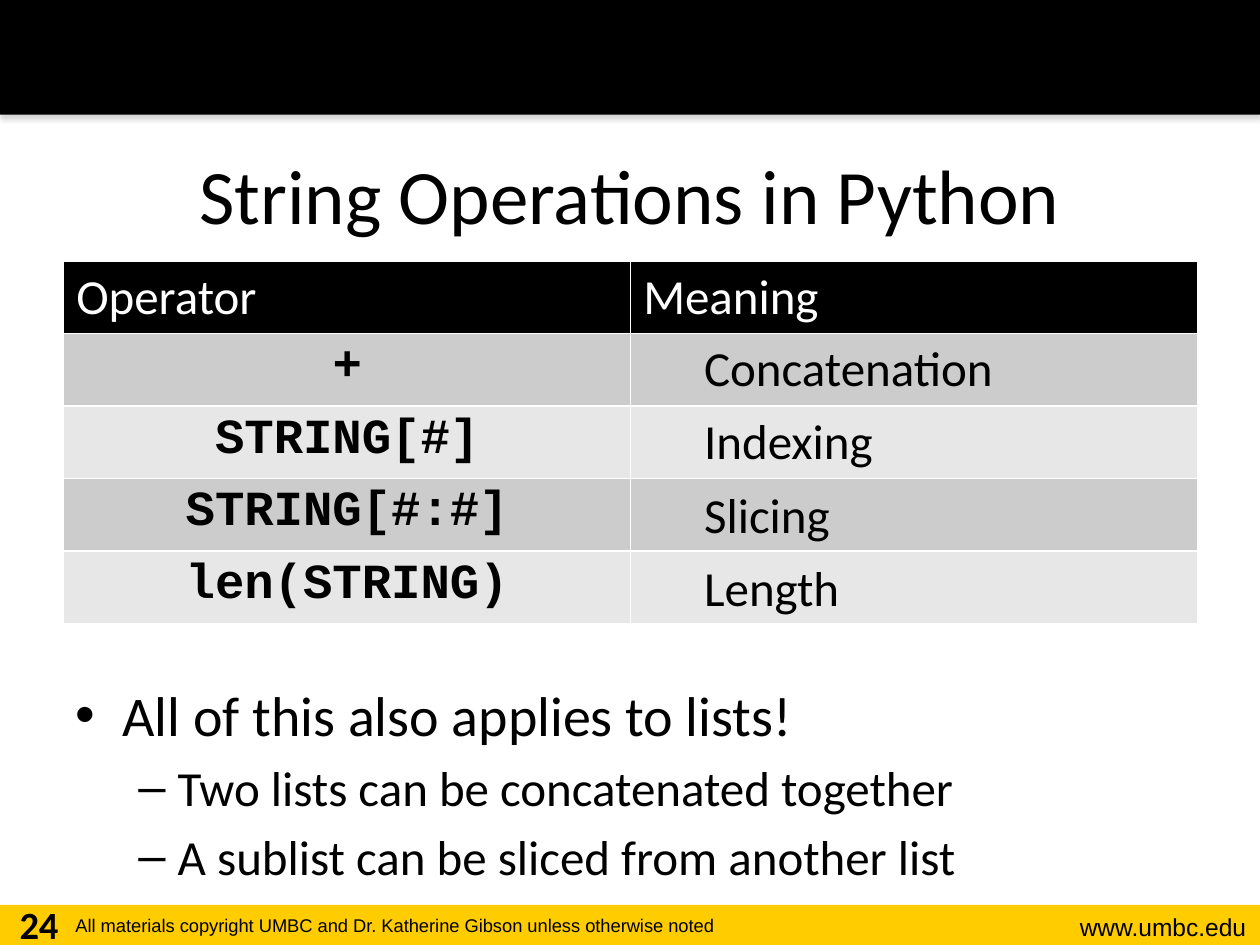
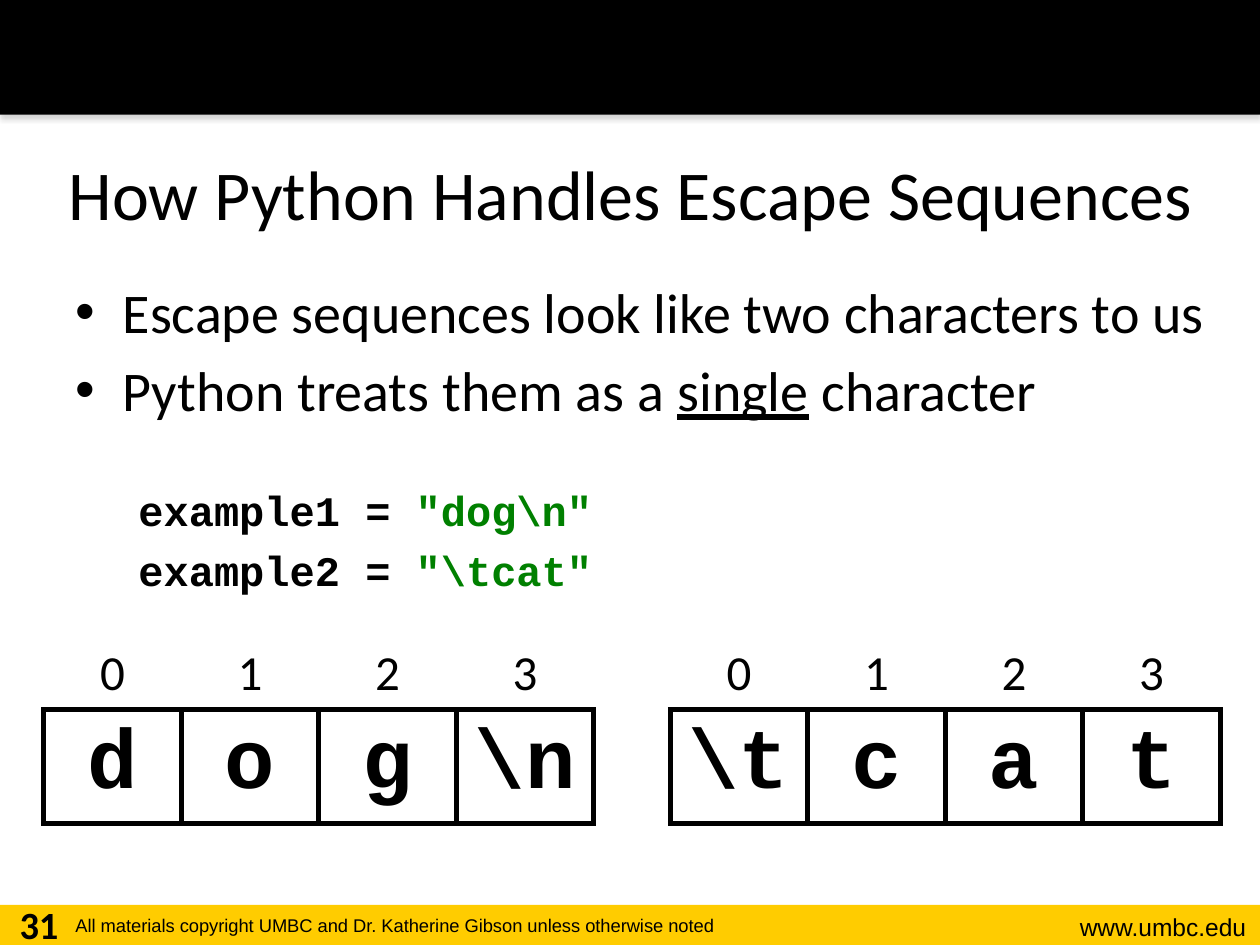
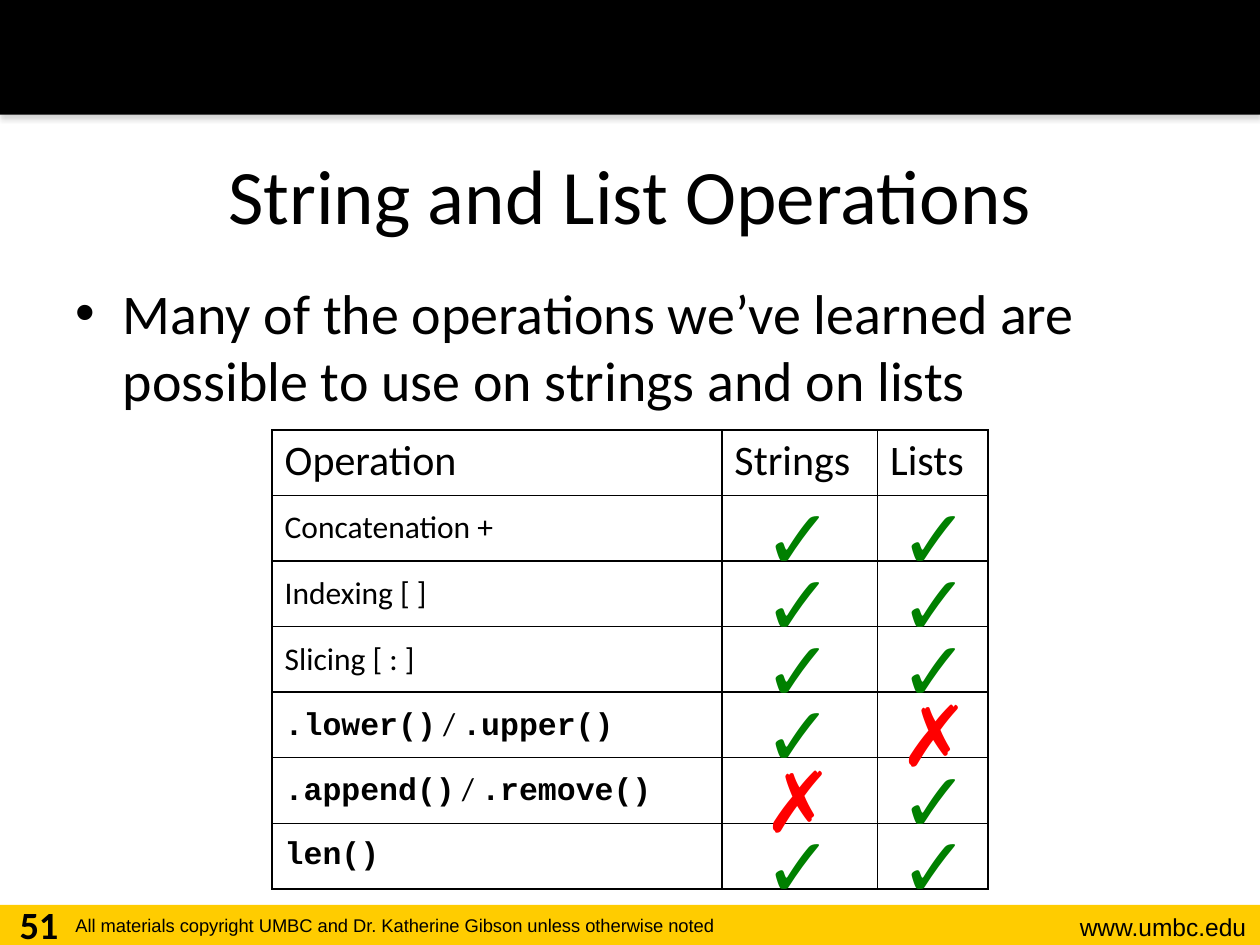
from lxml import etree
from pptx import Presentation
from pptx.dml.color import RGBColor
from pptx.enum.shapes import MSO_SHAPE
from pptx.enum.text import MSO_ANCHOR, MSO_AUTO_SIZE, PP_ALIGN
from pptx.oxml.ns import qn
from pptx.util import Pt

RECTANGLE = MSO_SHAPE.RECTANGLE
TOP, MIDDLE, BOTTOM = MSO_ANCHOR.TOP, MSO_ANCHOR.MIDDLE, MSO_ANCHOR.BOTTOM
LEFT, CENTER, RIGHT = PP_ALIGN.LEFT, PP_ALIGN.CENTER, PP_ALIGN.RIGHT
NO_AUTOFIT = MSO_AUTO_SIZE.NONE

COLORS = {
    "black": "000000",
    "white": "FFFFFF",
    "gold": "FFCC00",
    "dark row": "CCCCCC",
    "light row": "E7E7E7",
    "shadow": "808080",
    "green": "008000",
    "red": "FF0000",
}
BODY_FONT, FOOTER_FONT, CODE_FONT = "Calibri", "Arial", "Courier New"
SLIDE_WIDTH, SLIDE_HEIGHT = 720, 540
PLAIN_TABLE_STYLE = "{2D5ABB26-0587-4C30-8999-92F81FD0307C}"
CODE = {"font": CODE_FONT, "bold": True}
YES, NO = ("✓", "green"), ("✗", "red")


def rgb(color):
    return RGBColor.from_string(COLORS[color])


def add_element(parent, tag, **attributes):
    child = etree.SubElement(parent, qn(tag))
    for name, value in attributes.items():
        child.set(name, str(value))
    return child


def format_run(run, size=18, font=BODY_FONT, color="black", bold=False, underline=False):
    run.font.size = Pt(size)
    run.font.name = font
    run.font.color.rgb = rgb(color)
    run.font.bold = bold
    run.font.underline = underline


def write(paragraph, text, align=LEFT, space_before=0, indent=0, hanging=0,
          bullet=None, **style):
    """Fill a paragraph with a string, or with (text, style changes) pairs."""
    paragraph.alignment = align
    paragraph.space_before = Pt(space_before)
    properties = paragraph._p.get_or_add_pPr()
    properties.set("marL", str(Pt(indent)))
    properties.set("indent", str(-Pt(hanging)))
    if bullet:
        add_element(properties, "a:buFont", typeface="Arial")
        add_element(properties, "a:buChar", char=bullet)
    pieces = [(text, {})] if isinstance(text, str) else text
    for piece, changes in pieces:
        run = paragraph.add_run()
        run.text = piece
        format_run(run, **{**style, **changes})


def add_text(slide, box, paragraphs, anchor=TOP):
    """Add a text box; paragraphs is a list of (text, format) pairs."""
    frame = slide.shapes.add_textbox(*map(Pt, box)).text_frame
    frame.word_wrap = True
    frame.vertical_anchor = anchor
    for number, (text, style) in enumerate(paragraphs):
        paragraph = frame.add_paragraph() if number else frame.paragraphs[0]
        write(paragraph, text, **style)


def bullet(text, **style):
    return text, {"size": 32, "indent": 27, "hanging": 27, "bullet": "•", **style}


def sub_bullet(text):
    return text, {"size": 28, "indent": 58.5, "hanging": 22.5, "bullet": "–",
                  "space_before": 5.6}


def code_line(name, value, space_before):
    return ([(name + " = ", {}), (value, {"color": "green"})],
            {"size": 24, "indent": 36, "space_before": space_before, **CODE})


def add_band(slide, top, height, color):
    band = slide.shapes.add_shape(RECTANGLE, 0, Pt(top), Pt(SLIDE_WIDTH), Pt(height))
    band.fill.solid()
    band.fill.fore_color.rgb = rgb(color)
    band.line.fill.background()
    band.shadow.inherit = False
    return band


def add_band_shadow(band):
    effects = band._element.spPr.find(qn("a:effectLst"))
    shadow = add_element(effects, "a:outerShdw", blurRad=Pt(3.1), dist=Pt(1.8),
                         dir=90 * 60000, rotWithShape=0)
    color = add_element(shadow, "a:srgbClr", val=COLORS["shadow"])
    add_element(color, "a:alpha", val=35000)


def add_slide(presentation, title, number, title_size=44, title_box=(36, 65.5, 648, 90)):
    slide = presentation.slides.add_slide(presentation.slide_layouts[5])
    add_band(slide, 517, 23, "gold")
    add_band_shadow(add_band(slide, 0, 65.5, "black"))
    add_text(slide, (576, 517.7, 143.3, 24.5),
             [("www.umbc.edu", {"size": 14, "font": FOOTER_FONT, "align": RIGHT})])
    add_text(slide, (36, 519, 472, 21),
             [("All materials copyright UMBC and Dr. Katherine Gibson unless otherwise noted",
               {"size": 10.5, "font": FOOTER_FONT})])
    add_text(slide, (0, 511.2, 44.6, 28.8),
             [(number, {"size": 22, "bold": True, "align": CENTER})])

    heading = slide.shapes.title
    heading.left, heading.top, heading.width, heading.height = map(Pt, title_box)
    frame = heading.text_frame
    frame.auto_size = NO_AUTOFIT
    frame.vertical_anchor = MIDDLE
    write(frame.paragraphs[0], title, align=CENTER, size=title_size)
    return slide


def add_table(slide, left, top, widths, heights):
    frame = slide.shapes.add_table(len(heights), len(widths), Pt(left), Pt(top),
                                   Pt(sum(widths)), Pt(sum(heights)))
    table = frame.table
    table.first_row = table.horz_banding = False
    table._tbl.tblPr.find(qn("a:tableStyleId")).text = PLAIN_TABLE_STYLE
    for column, width in zip(table.columns, widths):
        column.width = Pt(width)
    for row, height in zip(table.rows, heights):
        row.height = Pt(height)
    return table


def set_cell(cell, text="", fill=None, border=None, border_width=1, sides="LRTB",
             anchor=TOP, **style):
    properties = cell._tc.get_or_add_tcPr()
    if border:
        for side in sides:
            line = add_element(properties, "a:ln" + side, w=Pt(border_width))
            add_element(add_element(line, "a:solidFill"), "a:srgbClr", val=COLORS[border])
    if fill:
        cell.fill.solid()
        cell.fill.fore_color.rgb = rgb(fill)
    else:
        cell.fill.background()
    cell.vertical_anchor = anchor
    if text:
        write(cell.text_frame.paragraphs[0], text, **style)


def add_operator_table(slide):
    operators = ["+", "STRING[#]", "STRING[#:#]", "len(STRING)"]
    meanings = ["Concatenation", "Indexing", "Slicing", "Length"]
    table = add_table(slide, 36.4, 149.3, [324] * 2, [41.4] * 5)
    for column, heading in enumerate(["Operator", "Meaning"]):
        set_cell(table.cell(0, column), heading, fill="black", border="white",
                 size=28, color="white")
    for row, (operator, meaning) in enumerate(zip(operators, meanings), start=1):
        fill = "dark row" if row % 2 else "light row"
        set_cell(table.cell(row, 0), operator, fill=fill, border="white",
                 align=CENTER, size=28, **CODE)
        set_cell(table.cell(row, 1), fill=fill, border="white")
        add_text(slide, (395.3, 146.2 + 41.75 * row, 191.5, 43.9),
                 [(meaning, {"size": 28})], anchor=MIDDLE)


def add_character_table(slide, left, characters):
    """Draw a row of boxed characters under their index numbers."""
    table = add_table(slide, left, 363.8, [78.6] * len(characters), [41.8, 61.7])
    for index, character in enumerate(characters):
        set_cell(table.cell(0, index), str(index), border="black", border_width=3,
                 sides="B", anchor=BOTTOM, align=CENTER, size=28)
        set_cell(table.cell(1, index), character, fill="white", border="black",
                 border_width=3, anchor=MIDDLE, align=CENTER, size=48, **CODE)


def method_pair(first, second):
    return [(first, CODE), (" / ", {}), (second, CODE)]


def add_support_table(slide):
    operations = [
        ("Concatenation +", YES, YES),
        ("Indexing [ ]", YES, YES),
        ("Slicing [ : ]", YES, YES),
        (method_pair(".lower()", ".upper()"), YES, NO),
        (method_pair(".append()", ".remove()"), NO, YES),
        ([("len()", CODE)], YES, YES),
    ]
    row_height = 37.5
    table = add_table(slide, 155.5, 245.6, [257, 89, 63.2],
                      [row_height] * (len(operations) + 1))
    for column, heading in enumerate(["Operation", "Strings", "Lists"]):
        set_cell(table.cell(0, column), heading, border="black", size=24)
    for row, (operation, *marks) in enumerate(operations, start=1):
        set_cell(table.cell(row, 0), operation, border="black", anchor=MIDDLE)
        for column, (mark, color) in enumerate(marks, start=1):
            set_cell(table.cell(row, column), border="black")
            add_text(slide, (351.6 + 77.6 * column, 236.6 + row_height * row, 65.5, 65.5),
                     [(mark, {"size": 48, "color": color})])


def main():
    presentation = Presentation()
    presentation.slide_width, presentation.slide_height = Pt(SLIDE_WIDTH), Pt(SLIDE_HEIGHT)

    slide = add_slide(presentation, "String Operations in Python", "24")
    add_text(slide, (36, 385.2, 648, 126), [
        bullet("All of this also applies to lists!"),
        sub_bullet("Two lists can be concatenated together"),
        sub_bullet("A sublist can be sliced from another list"),
    ])
    add_operator_table(slide)

    slide = add_slide(presentation, "How Python Handles Escape Sequences", "31",
                      title_size=40, title_box=(23, 64.8, 674.6, 90))
    add_text(slide, (36, 154.8, 661, 327.6), [
        bullet("Escape sequences look like two characters to us"),
        bullet([("Python treats them as a ", {}), ("single", {"underline": True}),
                (" character", {})], space_before=6.4),
        code_line("example1", '"dog\\n"', space_before=35),
        code_line("example2", '"\\tcat"', space_before=6),
    ])
    add_character_table(slide, 25, ["d", "o", "g", "\\n"])
    add_character_table(slide, 383, ["\\t", "c", "a", "t"])

    slide = add_slide(presentation, "String and List Operations", "51")
    add_text(slide, (36, 155.5, 648, 355.7), [
        bullet("Many of the operations we’ve learned are possible to use on strings and on lists"),
    ])
    add_support_table(slide)

    presentation.save("out.pptx")


if __name__ == "__main__":
    main()
